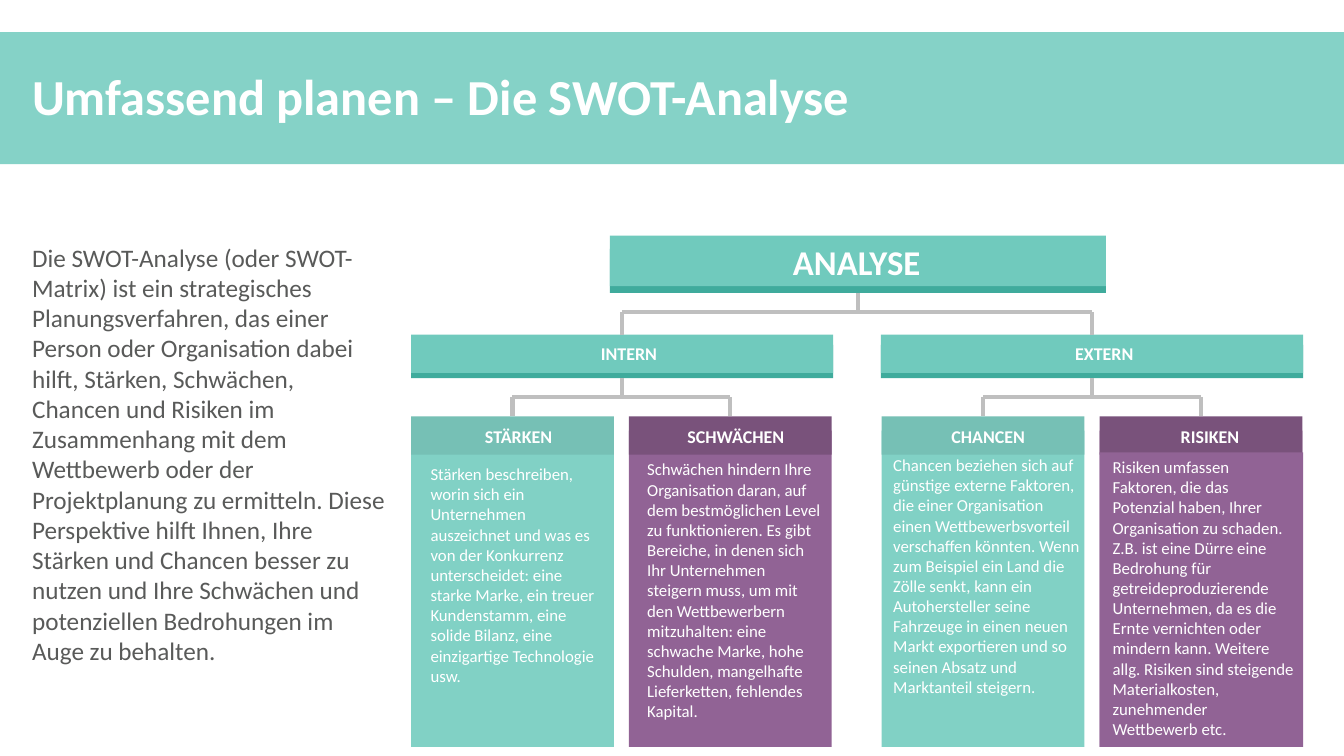
import dataclasses
import typing

import lxml.etree
import pptx
import pptx.dml.color
import pptx.enum.shapes
import pptx.enum.text
import pptx.oxml.ns
import pptx.util

Cm = pptx.util.Cm
ALIGN = pptx.enum.text.PP_ALIGN
ANCHOR = pptx.enum.text.MSO_ANCHOR


@dataclasses.dataclass(frozen=True)
class Theme:
    font: str = "Calibri"
    white: str = "FFFFFF"
    gray_text: str = "595A59"
    banner: str = "85D2C7"
    line: str = "BFBFBF"
    bar: str = "70CABD"
    bar_edge: str = "3FAB9C"
    teal: str = "81D1C5"
    teal_header: str = "76C0B5"
    purple: str = "916395"
    purple_header: str = "79527B"
    title_size: float = 36
    root_size: float = 24.8
    label_size: float = 12.8
    intro_size: float = 18
    body_size: float = 12
    line_width: float = 3


THEME = Theme()


class Box(typing.NamedTuple):
    """Left, top, width and height in centimetres."""
    left: float
    top: float
    width: float
    height: float


class Bar(typing.NamedTuple):
    label: str
    face: Box
    edge: Box
    label_box: Box
    size: float


class Column(typing.NamedTuple):
    label: str
    left: float
    label_left: float
    label_width: float
    fill: str
    header_fill: str
    text: str
    text_box: Box
    text_inset: float = 0.23
    text_fill: typing.Optional[str] = None


ROOT = Bar("ANALYSE", Box(15.37, 5.94, 12.5, 1.27), Box(15.37, 6.27, 12.5, 1.11),
           Box(19.28, 5.94, 4.62, 1.32), THEME.root_size)
BRANCHES = [
    Bar(label, Box(left, 8.43, 10.64, 0.97), Box(left, 8.69, 10.64, 0.84),
        Box(label_left, 8.51, label_width, 0.81), THEME.label_size)
    for label, left, label_left, label_width in [
        ("INTERN", 10.36, 14.53, 2.64), ("EXTERN", 22.2, 26.37, 2.92)]
]
ROOT_FORK, BRANCH_FORK = 7.87, 10.01

COLUMN_WIDTH = 5.11
HEADER_TOP, HEADER_HEIGHT = 10.49, 0.97
BODY_TOP, BODY_HEIGHT = 10.85, 7.97
TEAL = (THEME.teal, THEME.teal_header)
PURPLE = (THEME.purple, THEME.purple_header)
COLUMNS = [
    Column("STÄRKEN", 10.36, 11.61, 2.92, *TEAL,
           "Stärken beschreiben, worin sich ein Unternehmen auszeichnet und was es von der "
           "Konkurrenz unterscheidet: eine starke Marke, ein treuer Kundenstamm, eine solide "
           "Bilanz, eine einzigartige Technologie usw.", Box(10.62, 11.58, 4.65, 5.87)),
    Column("SCHWÄCHEN", 15.85, 16.97, 3.15, *PURPLE,
           "Schwächen hindern Ihre Organisation daran, auf dem bestmöglichen Level zu "
           "funktionieren. Es gibt Bereiche, in denen sich Ihr Unternehmen steigern muss, um mit "
           "den Wettbewerbern mitzuhalten: eine schwache Marke, hohe Schulden, mangelhafte "
           "Lieferketten, fehlendes Kapital.", Box(16.08, 11.46, 4.9, 6.91)),
    Column("CHANCEN", 22.22, 23.09, 3.63, *TEAL,
           "Chancen beziehen sich auf günstige externe Faktoren, die einer Organisation einen "
           "Wettbewerbsvorteil verschaffen könnten. Wenn zum Beispiel ein Land die Zölle senkt, "
           "kann ein Autohersteller seine Fahrzeuge in einen neuen Markt exportieren und so "
           "seinen Absatz und Marktanteil steigern.", Box(22.28, 11.35, 5.23, 6.38)),
    Column("RISIKEN", 27.71, 29.24, 2.51, *PURPLE,
           "Risiken umfassen Faktoren, die das Potenzial haben, Ihrer Organisation zu schaden. "
           "Z.B. ist eine Dürre eine Bedrohung für getreideproduzierende Unternehmen, da es die "
           "Ernte vernichten oder mindern kann. Weitere allg. Risiken sind steigende "
           "Materialkosten, zunehmender Wettbewerb etc.", Box(27.71, 11.4, 5.13, 7.42),
           text_inset=0.33, text_fill=THEME.purple),
]
INTRO = (
    "Die SWOT-Analyse (oder SWOT-Matrix) ist ein strategisches Planungsverfahren, das einer "
    "Person oder Organisation dabei hilft, Stärken, Schwächen, Chancen und Risiken im "
    "Zusammenhang mit dem Wettbewerb oder der Projektplanung zu ermitteln. Diese Perspektive "
    "hilft Ihnen, Ihre Stärken und Chancen besser zu nutzen und Ihre Schwächen und potenziellen "
    "Bedrohungen im Auge zu behalten."
)


def rgb(color: str) -> pptx.dml.color.RGBColor:
    return pptx.dml.color.RGBColor.from_string(color)


def add_rectangle(slide, box: Box, fill: str):
    shape = slide.shapes.add_shape(
        pptx.enum.shapes.MSO_SHAPE.RECTANGLE, *(Cm(value) for value in box))
    shape.shadow.inherit = False
    shape.fill.solid()
    shape.fill.fore_color.rgb = rgb(fill)
    shape.line.fill.background()
    return shape


def add_text(slide, text: str, box: Box, *, size: float, color: str = THEME.white,
             bold: bool = False, align=ALIGN.LEFT, anchor=ANCHOR.TOP,
             inset: tuple = (0.25, 0.13, 0.25, 0.13), grow: bool = True,
             line_spacing: typing.Optional[float] = None, fill: typing.Optional[str] = None):
    if fill:
        shape = add_rectangle(slide, box, fill)
    else:
        shape = slide.shapes.add_textbox(*(Cm(value) for value in box))
    frame = shape.text_frame
    frame.word_wrap = True
    sizing = pptx.enum.text.MSO_AUTO_SIZE
    frame.auto_size = sizing.SHAPE_TO_FIT_TEXT if grow else sizing.NONE
    frame.vertical_anchor = anchor
    (frame.margin_left, frame.margin_top,
     frame.margin_right, frame.margin_bottom) = (Cm(value) for value in inset)
    paragraph = frame.paragraphs[0]
    paragraph.text = text
    paragraph.alignment = align
    paragraph.line_spacing = line_spacing
    font = paragraph.font
    font.name, font.size, font.bold = THEME.font, pptx.util.Pt(size), bold
    font.color.rgb = rgb(color)


def add_line(slide, start: tuple, end: tuple):
    connector = slide.shapes.add_connector(
        pptx.enum.shapes.MSO_CONNECTOR.STRAIGHT, *start, *end)
    connector.line.color.rgb = rgb(THEME.line)
    connector.line.width = pptx.util.Pt(THEME.line_width)
    properties = connector._element.spPr
    lxml.etree.SubElement(properties, pptx.oxml.ns.qn("a:effectLst"))
    return connector


def center(shape) -> int:
    return shape.left + shape.width // 2


def add_fork(slide, parent, children: list, height: float) -> None:
    """Stem below the parent, crossbar, and a drop to each child."""
    level = Cm(height)
    stem_x = center(parent)
    stem = add_line(slide, (stem_x, parent.top + parent.height), (stem_x, level))
    stem.begin_connect(parent, 2)
    add_line(slide, (center(children[0]), level), (center(children[-1]), level))
    for child in children:
        drop = add_line(slide, (center(child), level), (center(child), child.top))
        drop.end_connect(child, 0)


def add_bar(slide, bar: Bar) -> tuple:
    edge = add_rectangle(slide, bar.edge, THEME.bar_edge)
    face = add_rectangle(slide, bar.face, THEME.bar)
    add_text(slide, bar.label, bar.label_box, size=bar.size, bold=True,
             align=ALIGN.CENTER, anchor=ANCHOR.MIDDLE)
    return face, edge


def add_column(slide, column: Column):
    add_rectangle(slide, Box(column.left, BODY_TOP, COLUMN_WIDTH, BODY_HEIGHT), column.fill)
    header = add_rectangle(
        slide, Box(column.left, HEADER_TOP, COLUMN_WIDTH, HEADER_HEIGHT), column.header_fill)
    add_text(slide, column.label, Box(column.label_left, 10.59, column.label_width, 0.81),
             size=THEME.label_size, bold=True, align=ALIGN.CENTER, anchor=ANCHOR.MIDDLE)
    add_text(slide, column.text, column.text_box, size=THEME.body_size,
             inset=(column.text_inset, 0.11, 0.23, 0.11), fill=column.text_fill)
    return header


def main() -> None:
    presentation = pptx.Presentation()
    presentation.slide_width, presentation.slide_height = Cm(33.87), Cm(19.05)
    slide = presentation.slides.add_slide(presentation.slide_layouts[6])

    # Title banner and introduction
    add_rectangle(slide, Box(0, 0.81, 33.87, 3.33), THEME.banner)
    add_text(slide, "Umfassend planen – Die SWOT-Analyse", Box(0.56, 1.68, 31.55, 2.49),
             size=THEME.title_size, bold=True, grow=False, line_spacing=0.9)
    add_text(slide, INTRO, Box(0.56, 5.97, 9.4, 11.02),
             size=THEME.intro_size, color=THEME.gray_text)

    # Tree of bars and columns
    _, root_edge = add_bar(slide, ROOT)
    branches = [add_bar(slide, bar) for bar in BRANCHES]
    headers = [add_column(slide, column) for column in COLUMNS]

    # Connecting lines
    add_fork(slide, root_edge, [face for face, _ in branches], ROOT_FORK)
    for index, (_, edge) in enumerate(branches):
        add_fork(slide, edge, headers[2 * index:2 * index + 2], BRANCH_FORK)

    presentation.save("out.pptx")


if __name__ == "__main__":
    main()
